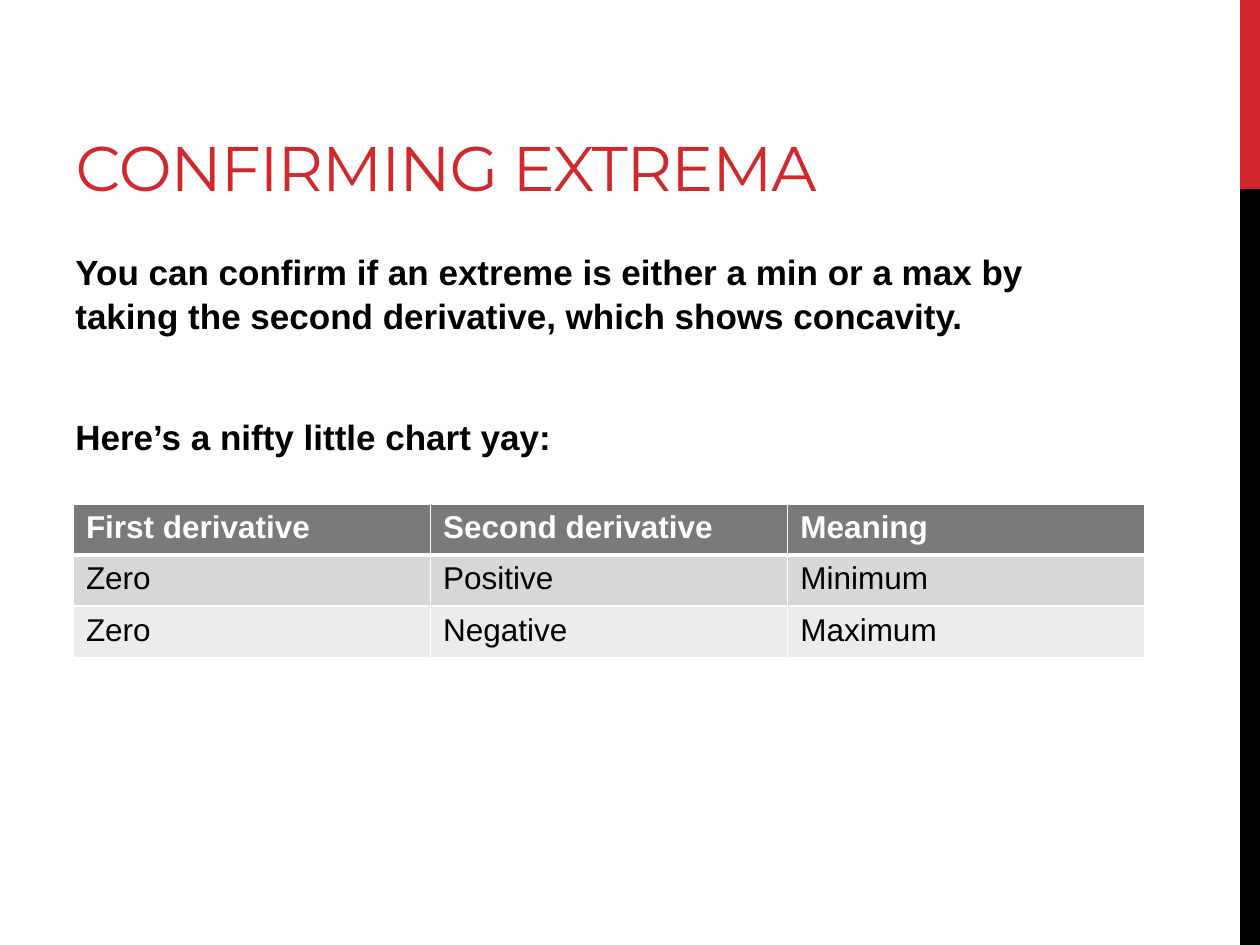
import pptx
import pptx.dml.color
import pptx.enum.shapes
import pptx.enum.text
import pptx.oxml.ns
import pptx.util
from lxml import etree

Cm = pptx.util.Cm
Pt = pptx.util.Pt


def color(hex_string):
    return pptx.dml.color.RGBColor.from_string(hex_string)


class SlideBuilder:
    RED, BLACK, WHITE = "D1282E", "000000", "FFFFFF"
    HEADER_FILL = "7A7A7A"
    ROW_FILLS = ("D7D7D7", "ECECEC")
    HEADING_FONT, BODY_FONT = "Montserrat", "Arial"

    def __init__(self, slide):
        self.slide = slide

    def style(self, paragraph, font, size, hex_color, bold=False):
        paragraph.font.name = font
        paragraph.font.size = Pt(size)
        paragraph.font.bold = bold
        paragraph.font.color.rgb = color(hex_color)

    def bar(self, left, top, width, height, fill):
        bar = self.slide.shapes.add_shape(
            pptx.enum.shapes.MSO_SHAPE.RECTANGLE, Cm(left), Cm(top), Cm(width), Cm(height))
        bar.shadow.inherit = False
        bar.fill.solid()
        bar.fill.fore_color.rgb = color(fill)
        bar.line.fill.background()

    def title(self, text, left, top, width, height):
        title = self.slide.shapes.title
        title.left, title.top = Cm(left), Cm(top)
        title.width, title.height = Cm(width), Cm(height)
        frame = title.text_frame
        frame.text = text
        frame.auto_size = pptx.enum.text.MSO_AUTO_SIZE.NONE
        frame.vertical_anchor = pptx.enum.text.MSO_ANCHOR.BOTTOM
        heading = frame.paragraphs[0]
        heading.alignment = pptx.enum.text.PP_ALIGN.LEFT
        self.style(heading, self.HEADING_FONT, 36, self.RED)
        # Slightly tightened letter spacing
        heading.runs[0].font._element.set("spc", "-60")

    def body(self, texts, left, top, width, height, gap):
        frame = self.slide.shapes.add_textbox(
            Cm(left), Cm(top), Cm(width), Cm(height)).text_frame
        frame.word_wrap = True
        frame.text = "\n".join(texts)
        for index, paragraph in enumerate(frame.paragraphs):
            self.style(paragraph, self.BODY_FONT, 20, self.BLACK, bold=True)
            paragraph.line_spacing = 1.05
            paragraph.space_before = Pt(gap if index else 0)

    def borders(self, cell, **widths):
        properties = cell._tc.get_or_add_tcPr()
        for side in "LRTB":
            line = etree.SubElement(properties, pptx.oxml.ns.qn(f"a:ln{side}"),
                                    w=str(Pt(widths.get(side, 1))))
            fill = etree.SubElement(line, pptx.oxml.ns.qn("a:solidFill"))
            etree.SubElement(fill, pptx.oxml.ns.qn("a:srgbClr"), val=self.WHITE)

    def table(self, rows, left, top, column_width, row_height):
        columns = len(rows[0])
        table = self.slide.shapes.add_table(
            len(rows), columns, Cm(left), Cm(top),
            Cm(column_width * columns), Cm(row_height * len(rows))).table
        for r, texts in enumerate(rows):
            header = r == 0
            fill = self.HEADER_FILL if header else self.ROW_FILLS[(r - 1) % 2]
            # A thick rule separates the header from the first row
            rule = {"B": 3} if header else {"T": 3} if r == 1 else {}
            for c, text in enumerate(texts):
                cell = table.cell(r, c)
                cell.text = text
                self.borders(cell, **rule)
                cell.fill.solid()
                cell.fill.fore_color.rgb = color(fill)
                self.style(cell.text_frame.paragraphs[0], self.BODY_FONT, 18,
                           self.WHITE if header else self.BLACK, bold=header)


def main():
    presentation = pptx.Presentation()
    presentation.slide_width, presentation.slide_height = Cm(25.4), Cm(19.05)
    title_only = presentation.slide_layouts[5]
    builder = SlideBuilder(presentation.slides.add_slide(title_only))

    # Side stripe
    builder.bar(25, 0, 0.4, 3.81, builder.RED)
    builder.bar(25, 3.81, 0.4, 15.24, builder.BLACK)

    # Title and explanation
    builder.title("CONFIRMING EXTREMA", 1.27, 0.43, 21.17, 3.81)
    builder.body([
        "You can confirm if an extreme is either a min or a max by taking "
        "the second derivative, which shows concavity.",
        "Here’s a nifty little chart yay:",
    ], 1.27, 4.88, 21.17, 12.14, gap=44)

    # Second derivative test
    builder.table([
        ("First derivative", "Second derivative", "Meaning"),
        ("Zero", "Positive", "Minimum"),
        ("Zero", "Negative", "Maximum"),
    ], 1.48, 10.16, column_width=7.2, row_height=1.03)

    presentation.save("out.pptx")


if __name__ == "__main__":
    main()
